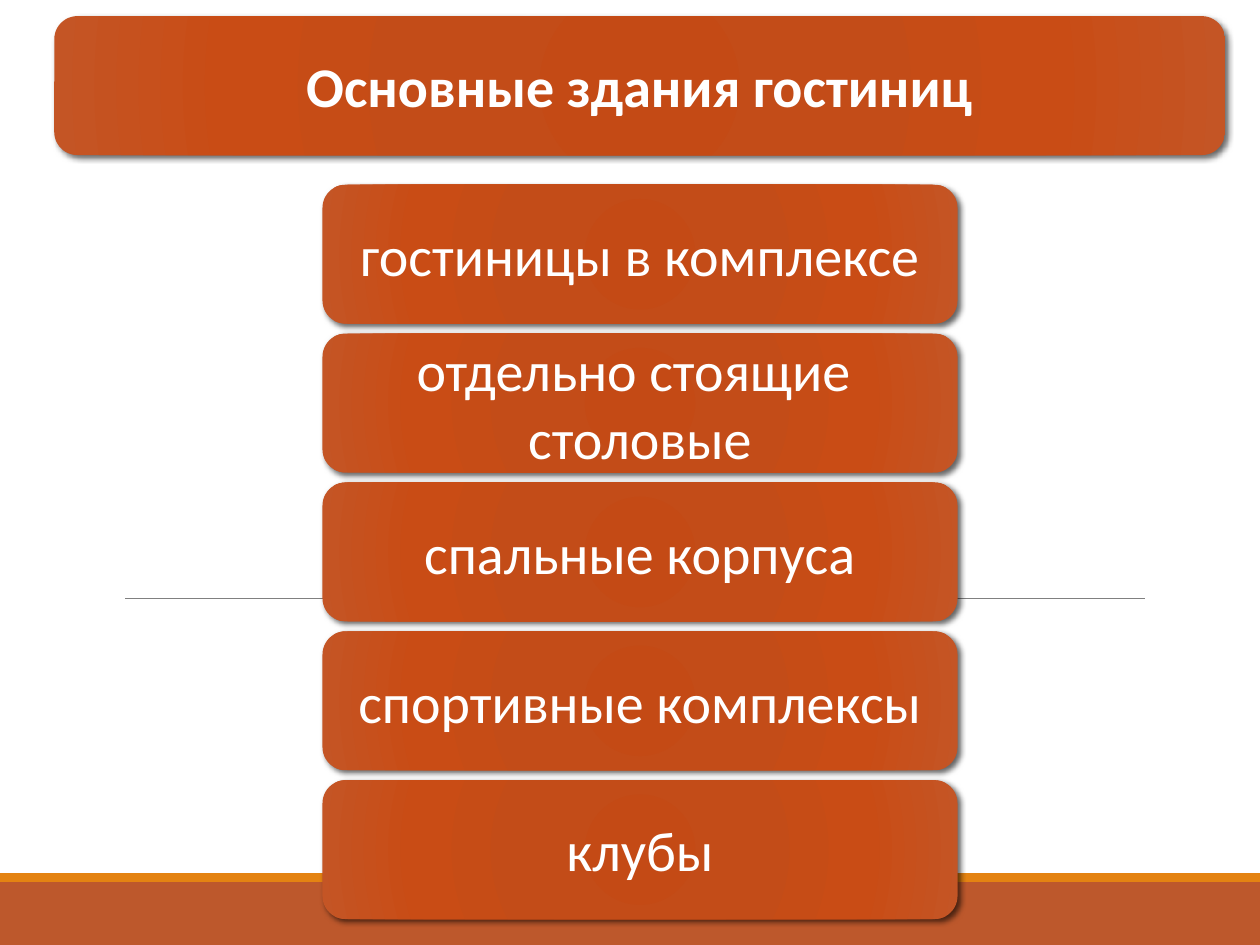
import pptx
import pptx.util
import pptx.dml.color
import pptx.enum.shapes
import pptx.enum.text
import pptx.oxml
import pptx.oxml.ns
from dataclasses import dataclass

Pt = pptx.util.Pt
Kind = pptx.enum.shapes.MSO_SHAPE


@dataclass(frozen=True)
class Theme:
    font: str = "Calibri"
    size: int = 32
    text: str = "FFFFFF"
    band: str = "BD582C"
    strip: str = "E48312"
    rule: str = "808080"
    glow: tuple = ((0, "C44A15"), (34, "C34C18"), (70, "C94C15"), (100, "C45525"))


THEME = Theme()
NS = pptx.oxml.ns.nsdecls("a")


def color(code):
    return pptx.dml.color.RGBColor.from_string(code)


def shape(slide, kind, box, fill=None):
    item = slide.shapes.add_shape(kind, *[Pt(n) for n in box])
    item.shadow.inherit = False
    item.line.fill.background()
    if fill:
        item.fill.solid()
        item.fill.fore_color.rgb = color(fill)
    return item


def write(item, text, bold=False, size=THEME.size, fill=THEME.text):
    frame = item.text_frame
    frame.word_wrap = True
    frame.vertical_anchor = pptx.enum.text.MSO_ANCHOR.MIDDLE
    frame.text = text
    for para in frame.paragraphs:
        para.alignment = pptx.enum.text.PP_ALIGN.CENTER
        for run in para.runs:
            run.font.name = THEME.font
            run.font.size = Pt(size)
            run.font.bold = bold
            run.font.color.rgb = color(fill)


def card(slide, box, text, bold=False):
    item = shape(slide, Kind.ROUNDED_RECTANGLE, box)
    # Radial fill in place of the empty one
    item.fill.background()
    props = item._element.spPr
    stops = "".join(
        f'<a:gs pos="{pos * 1000}"><a:srgbClr val="{code}"/></a:gs>'
        for pos, code in THEME.glow)
    grad = pptx.oxml.parse_xml(
        f'<a:gradFill {NS} rotWithShape="1"><a:gsLst>{stops}</a:gsLst>'
        '<a:path path="circle"><a:fillToRect l="100000" t="100000" '
        'r="100000" b="100000"/></a:path></a:gradFill>')
    blank = props.find(pptx.oxml.ns.qn("a:noFill"))
    props.replace(blank, grad)
    # Soft shadow to the lower right
    props.find(pptx.oxml.ns.qn("a:effectLst")).append(pptx.oxml.parse_xml(
        f'<a:outerShdw {NS} blurRad="{Pt(3.5)}" dist="{Pt(2)}" dir="2700000" '
        'algn="tl" rotWithShape="0"><a:srgbClr val="000000">'
        '<a:alpha val="60000"/></a:srgbClr></a:outerShdw>'))
    write(item, text, bold=bold)


def footer(slide, box):
    left, top, width, height = box
    edge = 5
    shape(slide, Kind.RECTANGLE, (left, top + edge, width, height - edge), THEME.band)
    shape(slide, Kind.RECTANGLE, (left, top, width, edge), THEME.strip)


def rule(slide, left, right, top):
    line = slide.shapes.add_connector(
        pptx.enum.shapes.MSO_CONNECTOR.STRAIGHT,
        Pt(left), Pt(top), Pt(right), Pt(top))
    line.line.color.rgb = color(THEME.rule)
    line.line.width = Pt(0.5)
    line._element.spPr.append(pptx.oxml.parse_xml(f"<a:effectLst {NS}/>"))


def stack(slide, box, names, gap):
    left, top, width, height = box
    tall = (height - gap * (len(names) - 1)) / len(names)
    for row, name in enumerate(names):
        card(slide, (left, top + row * (tall + gap), width, tall), name)


def main():
    deck = pptx.Presentation()
    deck.slide_width, deck.slide_height = Pt(720), Pt(540)
    slide = deck.slides.add_slide(deck.slide_layouts[6])

    # Backdrop
    footer(slide, (0, 499, 720, 41))
    rule(slide, 71.5, 654.5, 342)

    # Heading and list of buildings
    card(slide, (31, 9.2, 669, 79.4), "Основные здания гостиниц", bold=True)
    stack(slide, (184.3, 105.6, 362.9, 419.6), (
        "гостиницы в комплексе",
        "отдельно стоящие \nстоловые",
        "спальные корпуса",
        "спортивные комплексы",
        "клубы",
    ), gap=5.7)

    deck.save("out.pptx")


if __name__ == "__main__":
    main()
